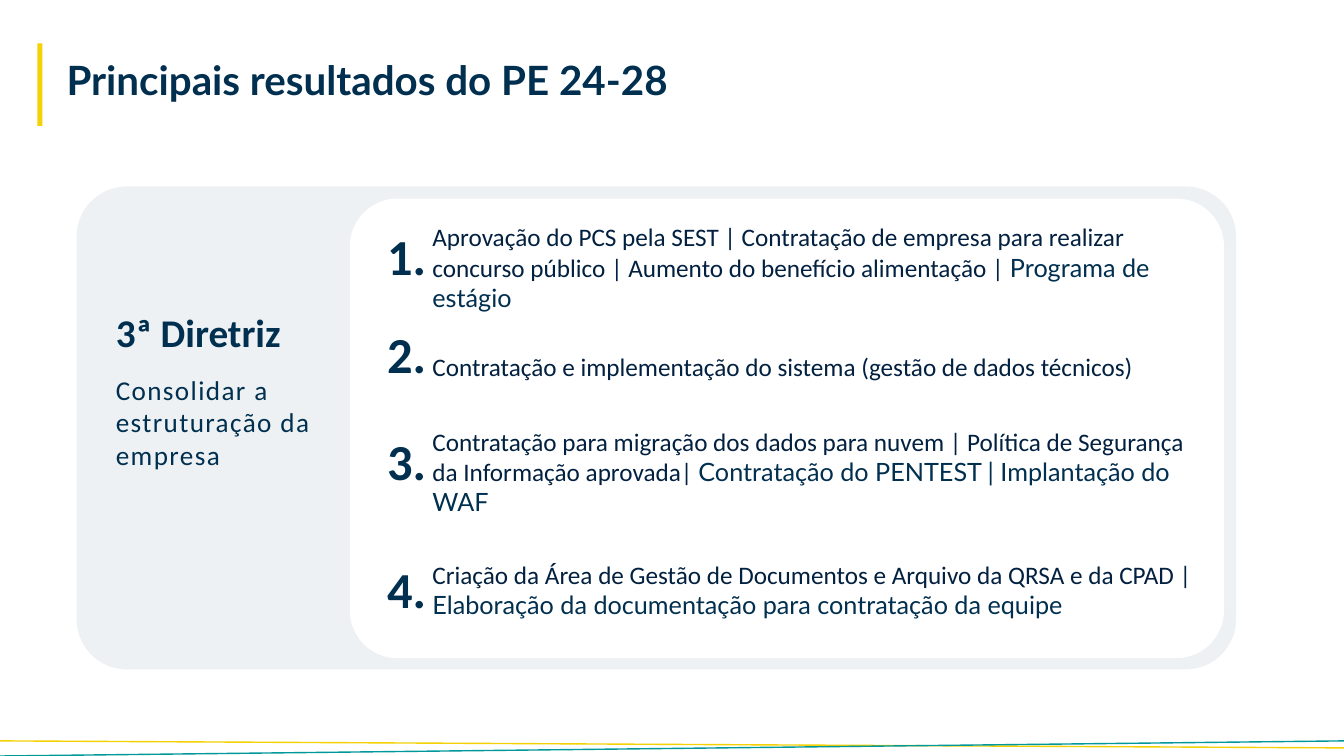
from lxml.etree import SubElement
from pptx import Presentation
from pptx.dml.color import RGBColor
from pptx.enum.shapes import MSO_CONNECTOR, MSO_SHAPE
from pptx.enum.text import MSO_ANCHOR, MSO_AUTO_SIZE, PP_ALIGN
from pptx.oxml.ns import qn
from pptx.util import Inches, Pt

COLORS = {
    "navy": "002F4F",
    "ink": "022040",
    "yellow": "F4D205",
    "gold": "F3D105",
    "teal": "00989A",
    "panel": "EDF1F3",
    "white": "FFFFFF",
}

deck = Presentation()
deck.slide_width = Inches(13.33)
deck.slide_height = Inches(7.5)
page = deck.slides.add_slide(deck.slide_layouts[5])


def add_span(para, text, size, color="navy", font="Calibri", bold=False):
    span = para.add_run()
    span.text = text
    span.font.size = Pt(size)
    span.font.name = font
    span.font.bold = bold
    span.font.color.rgb = RGBColor.from_string(COLORS[color])
    return span


def add_box(left, top, width, height, wrap=True):
    box = page.shapes.add_textbox(Inches(left), Inches(top), Inches(width), Inches(height))
    box.text_frame.word_wrap = wrap
    box.text_frame.auto_size = MSO_AUTO_SIZE.SHAPE_TO_FIT_TEXT
    return box.text_frame.paragraphs[0]


for kind, left, top, width, height, color in [
    (MSO_SHAPE.RECTANGLE, 0.37, 0.43, 0.05, 0.82, "yellow"),
    (MSO_SHAPE.ROUNDED_RECTANGLE, 0.76, 1.85, 11.5, 4.79, "panel"),
    (MSO_SHAPE.ROUNDED_RECTANGLE, 3.47, 1.97, 8.67, 4.56, "white"),
]:
    shape = page.shapes.add_shape(kind, Inches(left), Inches(top), Inches(width), Inches(height))
    shape.shadow.inherit = False
    shape.fill.solid()
    shape.fill.fore_color.rgb = RGBColor.from_string(COLORS[color])
    shape.line.fill.background()
    if kind == MSO_SHAPE.ROUNDED_RECTANGLE:
        shape.adjustments[0] = 0.104

for right_end, left_end, color in [(7.42, 7.35, "gold"), (7.35, 7.5, "teal")]:
    line = page.shapes.add_connector(
        MSO_CONNECTOR.STRAIGHT, Inches(13.33), Inches(right_end), Inches(0), Inches(left_end)
    )
    line.line.width = Pt(1)
    line.line.color.rgb = RGBColor.from_string(COLORS[color])
    SubElement(line._element.spPr, qn("a:effectLst"))

title = page.shapes.title
title.left, title.top = Inches(0.56), Inches(0.55)
title.width, title.height = Inches(9.95), Inches(0.7)
title.text_frame.word_wrap = True
title.text_frame.auto_size = MSO_AUTO_SIZE.NONE
title.text_frame.vertical_anchor = MSO_ANCHOR.TOP
para = title.text_frame.paragraphs[0]
para.alignment = PP_ALIGN.LEFT
para.line_spacing = 0.9
add_span(para, "Principais resultados do PE 24-28", 28.8, font="Lato", bold=True)

add_span(add_box(1.05, 3.01, 1.86, 0.57, wrap=False), "3ª Diretriz", 28, bold=True)
goal = add_span(add_box(1.05, 3.65, 2.31, 1.08), "Consolidar a estruturação da empresa", 19.4)
goal.font._element.set("spc", "100")

results = [
    (2.18, 2.15, 1.01, 1,
     "Aprovação do PCS pela SEST | Contratação de empresa para realizar concurso público | "
     "Aumento do benefício alimentação | ",
     "Programa de estágio"),
    (3.16, 3.29, 0.51, 1.5,
     "Contratação e implementação do sistema (gestão de dados técnicos)",
     ""),
    (4.22, 4.18, 1.01, 1,
     "Contratação para migração dos dados para nuvem | Política de Segurança da Informação aprovada| ",
     "Contratação do PENTEST | Implantação do WAF"),
    (5.49, 5.5, 0.71, 1,
     "Criação da Área de Gestão de Documentos e Arquivo da QRSA e da CPAD | ",
     "Elaboração da documentação para contratação da equipe"),
]
for number, (number_top, top, height, spacing, done, added) in enumerate(results, 1):
    para = add_box(4.19, top, 7.79, height)
    para.line_spacing = spacing
    para.space_after = Pt(12)
    add_span(para, done, 18, "ink")
    if added:
        add_span(para, added, 18, font="Lato")
    add_span(add_box(3.74, number_top, 0.59, 0.71, wrap=False), f"{number}.", 36, bold=True)

deck.save("out.pptx")
